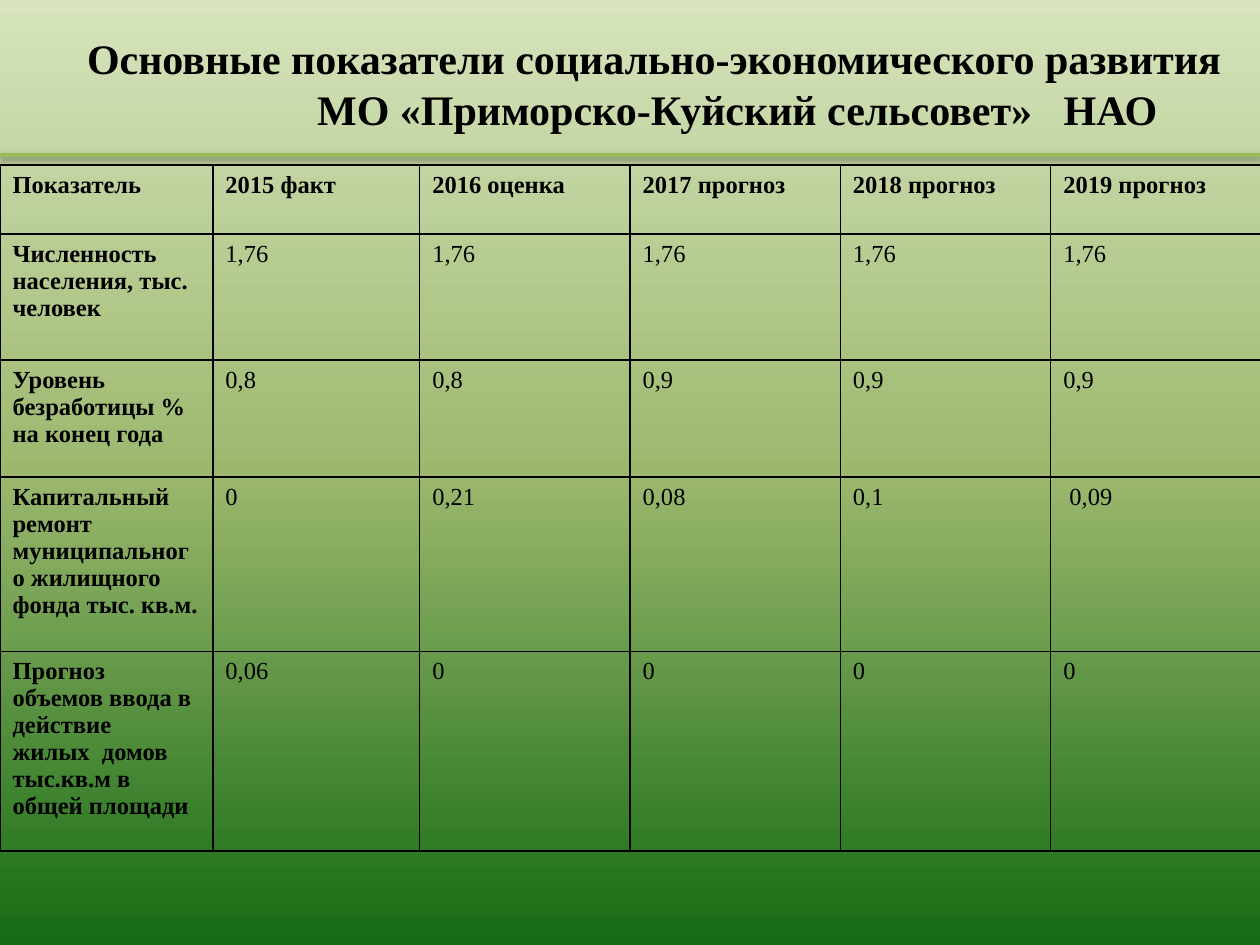
from lxml import etree
from pptx import Presentation
from pptx.dml.color import RGBColor
from pptx.enum.shapes import MSO_CONNECTOR
from pptx.enum.text import MSO_ANCHOR, MSO_AUTO_SIZE, PP_ALIGN
from pptx.oxml import parse_xml
from pptx.oxml.ns import nsdecls, qn
from pptx.util import Cm, Pt

FONT = "Times New Roman"
BLACK = "000000"
BACKGROUND_STOPS = [(0, "D7E4BD"), (50, "9CB86E"), (100, "156B13")]
TITLE = [
    "Основные показатели социально-экономического развития",
    "МО «Приморско-Куйский сельсовет»   НАО",
]
INDICATORS = [
    ["Показатель", "2015 факт", "2016 оценка", "2017 прогноз", "2018 прогноз", "2019 прогноз"],
    ["Численность населения, тыс. человек", "1,76", "1,76", "1,76", "1,76", "1,76"],
    ["Уровень безработицы % на конец года", "0,8", "0,8", "0,9", "0,9", "0,9"],
    ["Капитальный ремонт муниципального жилищного фонда тыс. кв.м.",
     "0", "0,21", "0,08", "0,1", " 0,09"],
    ["Прогноз объемов ввода в действие  жилых  домов тыс.кв.м в общей площади",
     "0,06", "0", "0", "0", "0"],
]
COLUMN_WIDTHS = [4.29, 4.17] + [4.24] * 4
ROW_HEIGHTS = [1.39, 2.54, 2.36, 3.51, 4.03]


def color(hex_value):
    return RGBColor.from_string(hex_value)


def style_text(paragraph, size, bold):
    for run in paragraph.runs:
        run.font.name = FONT
        run.font.size = Pt(size)
        run.font.bold = bold
        run.font.color.rgb = color(BLACK)


def paint_background(slide):
    fill = slide.background.fill
    fill.gradient()
    fill.gradient_angle = 270
    stops = slide.background._cSld.find(".//" + qn("a:gsLst"))
    for stop in list(stops):
        stops.remove(stop)
    for position, hex_value in BACKGROUND_STOPS:
        stop = etree.SubElement(stops, qn("a:gs"), pos=str(position * 1000))
        etree.SubElement(stop, qn("a:srgbClr"), val=hex_value)


def place_title(slide, left, top, width, height):
    title = slide.shapes.title
    title.left, title.top, title.width, title.height = left, top, width, height
    frame = title.text_frame
    frame.text = "\n".join(TITLE)
    frame.word_wrap = True
    frame.auto_size = MSO_AUTO_SIZE.NONE
    frame.vertical_anchor = MSO_ANCHOR.TOP
    for paragraph in frame.paragraphs:
        paragraph.alignment = PP_ALIGN.LEFT
        paragraph.line_spacing = 1
        paragraph.space_before = Pt(0)
        style_text(paragraph, 24, True)
    frame.paragraphs[1]._p.get_or_add_pPr().set("marL", str(Cm(4.64)))


def place_divider(slide, left, top, width):
    divider = slide.shapes.add_connector(
        MSO_CONNECTOR.STRAIGHT, left + width, top, left, top)
    divider.line.color.rgb = color("9BBB59")
    divider.line.width = Pt(2)
    divider._element.spPr.append(parse_xml(
        f'<a:effectLst {nsdecls("a")}>'
        f'<a:outerShdw blurRad="{Pt(3.1)}" dist="{Pt(1.6)}" dir="5400000" rotWithShape="0">'
        f'<a:srgbClr val="{BLACK}"><a:alpha val="38000"/></a:srgbClr>'
        '</a:outerShdw></a:effectLst>'))


def add_borders(cell):
    properties = cell._tc.get_or_add_tcPr()
    for side in ("lnL", "lnR", "lnT", "lnB"):
        properties.append(parse_xml(
            f'<a:{side} {nsdecls("a")} w="{Pt(1)}"><a:solidFill>'
            f'<a:srgbClr val="{BLACK}"/></a:solidFill></a:{side}>'))


def place_indicators(slide, left, top, width):
    table = slide.shapes.add_table(
        len(ROW_HEIGHTS), len(COLUMN_WIDTHS), left, top, width, Cm(sum(ROW_HEIGHTS))).table
    table.first_row = table.horz_banding = False
    for column, column_width in zip(table.columns, COLUMN_WIDTHS):
        column.width = Cm(column_width)
    for row, row_height in zip(table.rows, ROW_HEIGHTS):
        row.height = Cm(row_height)
    for r, values in enumerate(INDICATORS):
        for c, value in enumerate(values):
            cell = table.cell(r, c)
            cell.text = value
            style_text(cell.text_frame.paragraphs[0], 14, r == 0 or c == 0)
            add_borders(cell)
            cell.fill.background()


def main():
    deck = Presentation()
    deck.slide_width, deck.slide_height = Cm(25.4), Cm(19.05)
    slide = deck.slides.add_slide(deck.slide_layouts[5])
    paint_background(slide)
    place_divider(slide, 0, Cm(3.12), deck.slide_width)
    place_title(slide, Cm(1.5), Cm(0.53), Cm(23.7), Cm(2.29))
    place_indicators(slide, 0, Cm(3.33), deck.slide_width)
    deck.save("out.pptx")


if __name__ == "__main__":
    main()
